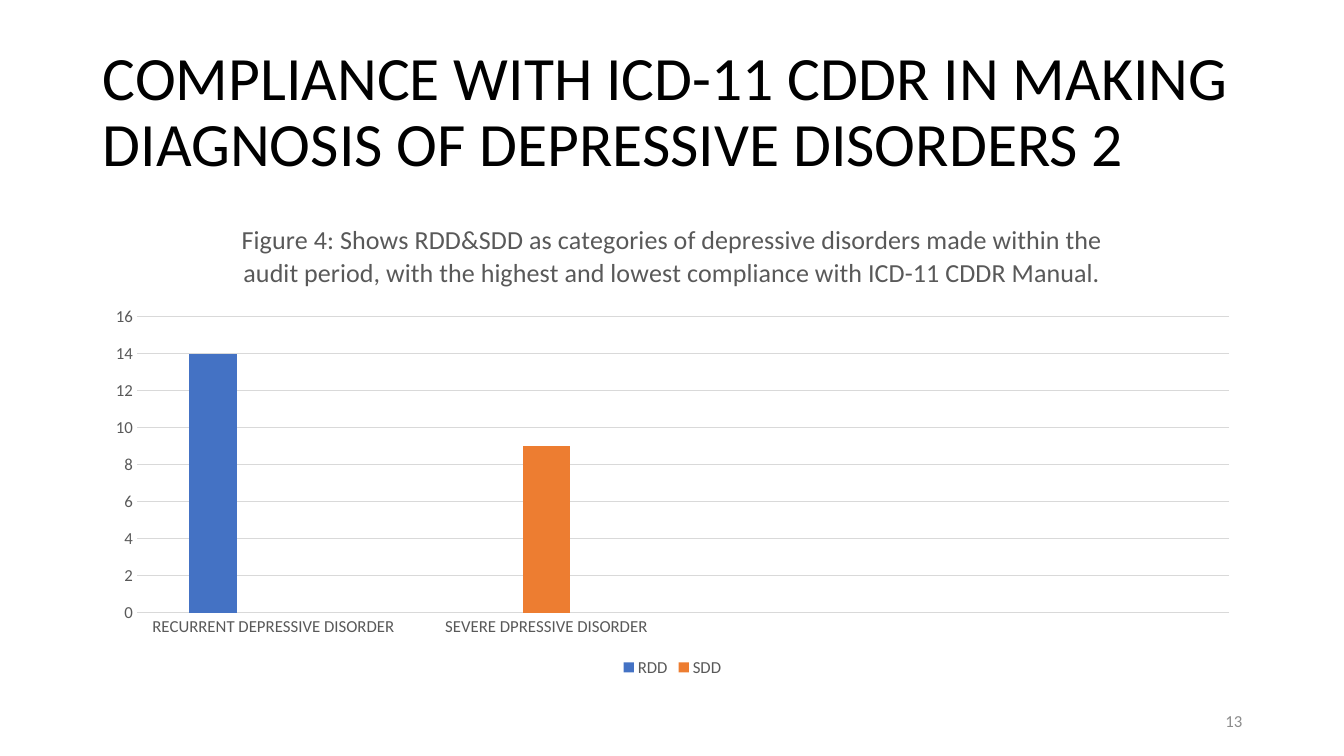
from lxml import etree
from pptx import Presentation
from pptx import util as u
from pptx.chart import data
from pptx.dml.color import RGBColor
from pptx.enum import chart as ch, text as tx

FACE = "Calibri"
GREY, RULE = "595959", "D9D9D9"
TITLE = "COMPLIANCE WITH ICD-11 CDDR IN MAKING DIAGNOSIS OF DEPRESSIVE DISORDERS 2"
FIGURE = ("Figure 4: Shows RDD&SDD as categories of depressive disorders made within the "
          "audit period, with the highest and lowest compliance with ICD-11 CDDR Manual.")
GROUPS = ["RECURRENT DEPRESSIVE DISORDER", "SEVERE DPRESSIVE DISORDER", "", ""]
SERIES = [
    ("RDD", [14, None, None, None], "4472C4"),
    ("SDD", [None, 9, None, None], "ED7D31"),
    ("Series 3", [None] * 4, "A5A5A5"),
]


def paint(tone, shade):
    """Set a colour format from a hex string."""
    tone.rgb = RGBColor.from_string(shade)


def apply(item, **values):
    """Set each given attribute on an item."""
    for name, value in values.items():
        setattr(item, name, value)


def style(font, size, shade):
    """Give a font its face, size and colour."""
    apply(font, name=FACE, size=u.Pt(size), bold=False)
    paint(font.color, shade)


def place(shape, left, top, width, height):
    """Move and size a shape in inches."""
    apply(shape, left=u.Inches(left), top=u.Inches(top),
          width=u.Inches(width), height=u.Inches(height))


def write(shape, words, size, shade, align, space=1.0):
    """Fill a shape with one formatted paragraph."""
    frame = shape.text_frame
    apply(frame, text=words, word_wrap=True, auto_size=tx.MSO_AUTO_SIZE.NONE,
          vertical_anchor=tx.MSO_ANCHOR.MIDDLE)
    para = frame.paragraphs[0]
    apply(para, alignment=align, line_spacing=space)
    style(para.runs[0].font, size, shade)


def rule(line):
    """Draw a thin light line."""
    paint(line.color, RULE)
    line.width = u.Pt(0.75)


def set_axes(chart):
    """Format both axes and the grid."""
    for axis in (chart.category_axis, chart.value_axis):
        apply(axis, major_tick_mark=ch.XL_TICK_MARK.NONE,
              minor_tick_mark=ch.XL_TICK_MARK.NONE)
        style(axis.tick_labels.font, 12, GREY)
    rule(chart.category_axis.format.line)
    apply(chart.value_axis, minimum_scale=0, maximum_scale=16, major_unit=2,
          has_major_gridlines=True)
    chart.value_axis.format.line.fill.background()
    rule(chart.value_axis.major_gridlines.format.line)


def set_legend(chart, hidden):
    """Put the legend below and hide one entry."""
    chart.has_legend = True
    legend = chart.legend
    apply(legend, position=ch.XL_LEGEND_POSITION.BOTTOM, include_in_layout=False)
    style(legend.font, 12, GREY)
    space = "{http://schemas.openxmlformats.org/drawingml/2006/chart}"
    entry = etree.Element(space + "legendEntry")
    etree.SubElement(entry, space + "idx", val=str(hidden))
    etree.SubElement(entry, space + "delete", val="1")
    legend._element.find(space + "legendPos").addnext(entry)


def add_bars(slide):
    """Add the compliance column chart."""
    source = data.CategoryChartData()
    source.categories = GROUPS
    for name, values, _ in SERIES:
        source.add_series(name, values)
    box = map(u.Inches, (0.92, 2, 11.5, 4.76))
    chart = slide.shapes.add_chart(ch.XL_CHART_TYPE.COLUMN_CLUSTERED, *box, source).chart
    style(chart.font, 10, "000000")
    chart.has_title = True
    chart.chart_title.text_frame.text = FIGURE
    style(chart.chart_title.text_frame.paragraphs[0].runs[0].font, 18.6, GREY)
    plot = chart.plots[0]
    apply(plot, gap_width=219, overlap=-27, vary_by_categories=False)
    for bars, (_, _, shade) in zip(plot.series, SERIES):
        bars.format.fill.solid()
        paint(bars.format.fill.fore_color, shade)
    set_axes(chart)
    set_legend(chart, 2)


def main():
    """Build and save the slide."""
    deck = Presentation()
    apply(deck, slide_width=u.Inches(13.33), slide_height=u.Inches(7.5))
    slide = deck.slides.add_slide(deck.slide_layouts[5])
    title = slide.shapes.title
    place(title, 0.92, 0.4, 11.5, 1.45)
    write(title, TITLE, 44, "000000", tx.PP_ALIGN.LEFT, 0.9)
    add_bars(slide)
    number = slide.shapes.add_textbox(0, 0, 0, 0)
    place(number, 9.42, 6.95, 3, 0.4)
    write(number, "13", 12, "8C8C8C", tx.PP_ALIGN.RIGHT)
    deck.save("out.pptx")


if __name__ == "__main__":
    main()
